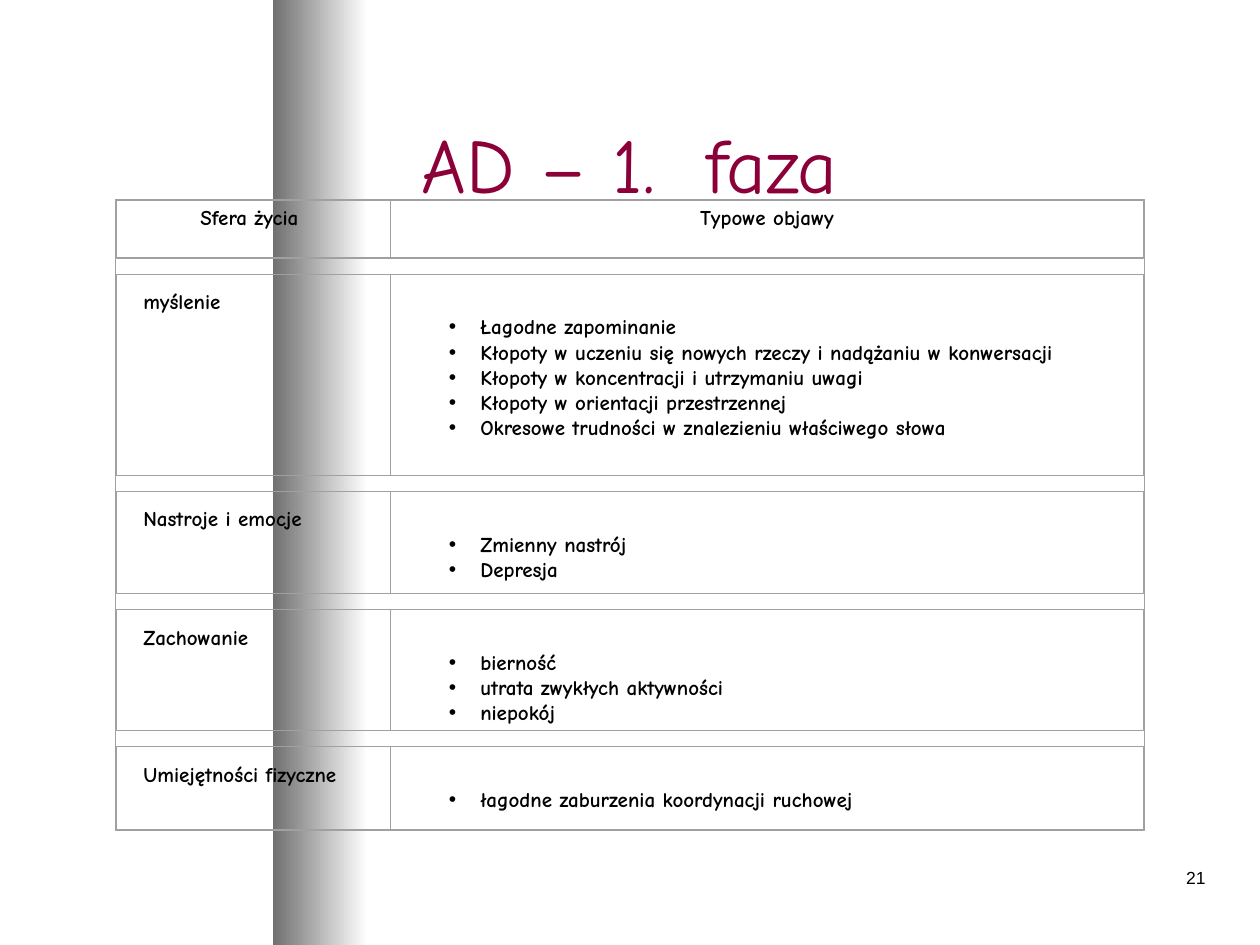
from dataclasses import dataclass

from lxml import etree
from pptx import Presentation
from pptx.dml.color import RGBColor
from pptx.enum.shapes import MSO_SHAPE
from pptx.enum.text import MSO_ANCHOR, PP_ALIGN
from pptx.oxml.ns import qn
from pptx.util import Pt

RECT = MSO_SHAPE.RECTANGLE
TOP, MIDDLE = MSO_ANCHOR.TOP, MSO_ANCHOR.MIDDLE
LEFT, CENTER, RIGHT = PP_ALIGN.LEFT, PP_ALIGN.CENTER, PP_ALIGN.RIGHT
FONT, BLACK, WINE, GREY = "Comic Neue", "000000", "8C0039", "A0A0A0"
LINE = 14.4  # height of one 12 pt line
GAP, PAD_X, PAD_Y = 9.2, 8.4, 4.7


@dataclass
class Box:
    x: float
    y: float
    w: float
    h: float

    def lengths(self) -> tuple:
        return Pt(self.x), Pt(self.y), Pt(self.w), Pt(self.h)

    def inner(self) -> "Box":
        return Box(self.x + PAD_X, self.y + PAD_Y,
                   self.w - 2 * PAD_X, self.h - 2 * PAD_Y)


@dataclass
class Style:
    size: float = 12
    font: str = FONT
    color: str = BLACK
    bold: bool = True
    align: PP_ALIGN = LEFT
    anchor: MSO_ANCHOR = TOP
    over: float = 0  # extra room above the text
    under: float = 0  # extra room below the text
    bullet: bool = False


@dataclass
class Row:
    height: float
    sphere: str
    signs: list[str]


HEAD = Style(align=CENTER, anchor=MIDDLE, under=LINE)
NAME = Style()
LIST = Style(over=LINE, bullet=True)

ROWS = [
    Row(33, "Sfera życia ", ["Typowe objawy"]),
    Row(115, "myślenie", [
        "Łagodne zapominanie",
        "Kłopoty w uczeniu się nowych rzeczy i nadążaniu w konwersacji",
        "Kłopoty w koncentracji i utrzymaniu uwagi",
        "Kłopoty w orientacji przestrzennej",
        "Okresowe trudności w znalezieniu właściwego słowa",
    ]),
    Row(58.4, "Nastroje i emocje", ["Zmienny nastrój", "Depresja"]),
    Row(69, "Zachowanie", ["bierność", "utrata zwykłych aktywności", "niepokój"]),
    Row(47.5, "Umiejętności fizyczne", ["łagodne zaburzenia koordynacji ruchowej"]),
]


def paint(value: str) -> RGBColor:
    return RGBColor.from_string(value)


def add_bullet(para) -> None:
    props = para._p.get_or_add_pPr()
    props.set("marL", str(Pt(36)))
    props.set("indent", str(-Pt(18)))
    etree.SubElement(props, qn("a:buFont")).set("typeface", "Arial")
    etree.SubElement(props, qn("a:buChar")).set("char", "•")


def add_text(slide, box: Box, lines: list[str], style: Style) -> None:
    frame = slide.shapes.add_textbox(*box.lengths()).text_frame
    frame.word_wrap = True
    frame.vertical_anchor = style.anchor
    frame.margin_top = Pt(3.6 + style.over)
    frame.margin_bottom = Pt(3.6 + style.under)
    for i, line in enumerate(lines):
        para = frame.add_paragraph() if i else frame.paragraphs[0]
        para.alignment = style.align
        if style.bullet:
            add_bullet(para)
        run = para.add_run()
        run.text = line
        run.font.name = style.font
        run.font.size = Pt(style.size)
        run.font.bold = style.bold
        run.font.color.rgb = paint(style.color)


def add_frame(slide, box: Box, width: float = 0) -> None:
    shape = slide.shapes.add_shape(RECT, *box.lengths())
    shape.shadow.inherit = False
    shape.fill.background()
    shape.line.color.rgb = paint(GREY)
    shape.line.width = Pt(width)


def add_band(slide, box: Box, start: str, end: str) -> None:
    shape = slide.shapes.add_shape(RECT, *box.lengths())
    shape.shadow.inherit = False
    shape.line.fill.background()
    shape.fill.gradient()
    shape.fill.gradient_angle = 0
    for stop, color, place in zip(shape.fill.gradient_stops, (start, end), (0, 1)):
        stop.color.rgb = paint(color)
        stop.position = place


def main() -> None:
    deck = Presentation()
    deck.slide_width, deck.slide_height = Pt(720), Pt(540)
    slide = deck.slides.add_slide(deck.slide_layouts[6])

    # Shaded band, page number and title
    add_band(slide, Box(156, 0, 54, 540), "707070", "FFFFFF")
    add_text(slide, Box(546, 492, 150, 36), ["21"],
             Style(size=10, font="Arial", bold=False, align=RIGHT))
    add_text(slide, Box(54, 48, 612, 90), ["AD – 1.  faza"],
             Style(size=44, color=WINE, bold=False, align=CENTER, anchor=MIDDLE))

    # Grid of spheres and signs
    top = 114.5
    for i, row in enumerate(ROWS):
        left = Box(66.4, top, 156.6, row.height)
        right = Box(223, top, 430.6, row.height)
        add_text(slide, left.inner(), [row.sphere], NAME if i else HEAD)
        add_frame(slide, left)
        add_text(slide, right.inner(), row.signs, LIST if i else HEAD)
        add_frame(slide, right)
        top += row.height + GAP

    # Outer border
    add_frame(slide, Box(66, 114, 588, 360.6), 0.87)

    deck.save("out.pptx")


if __name__ == "__main__":
    main()
